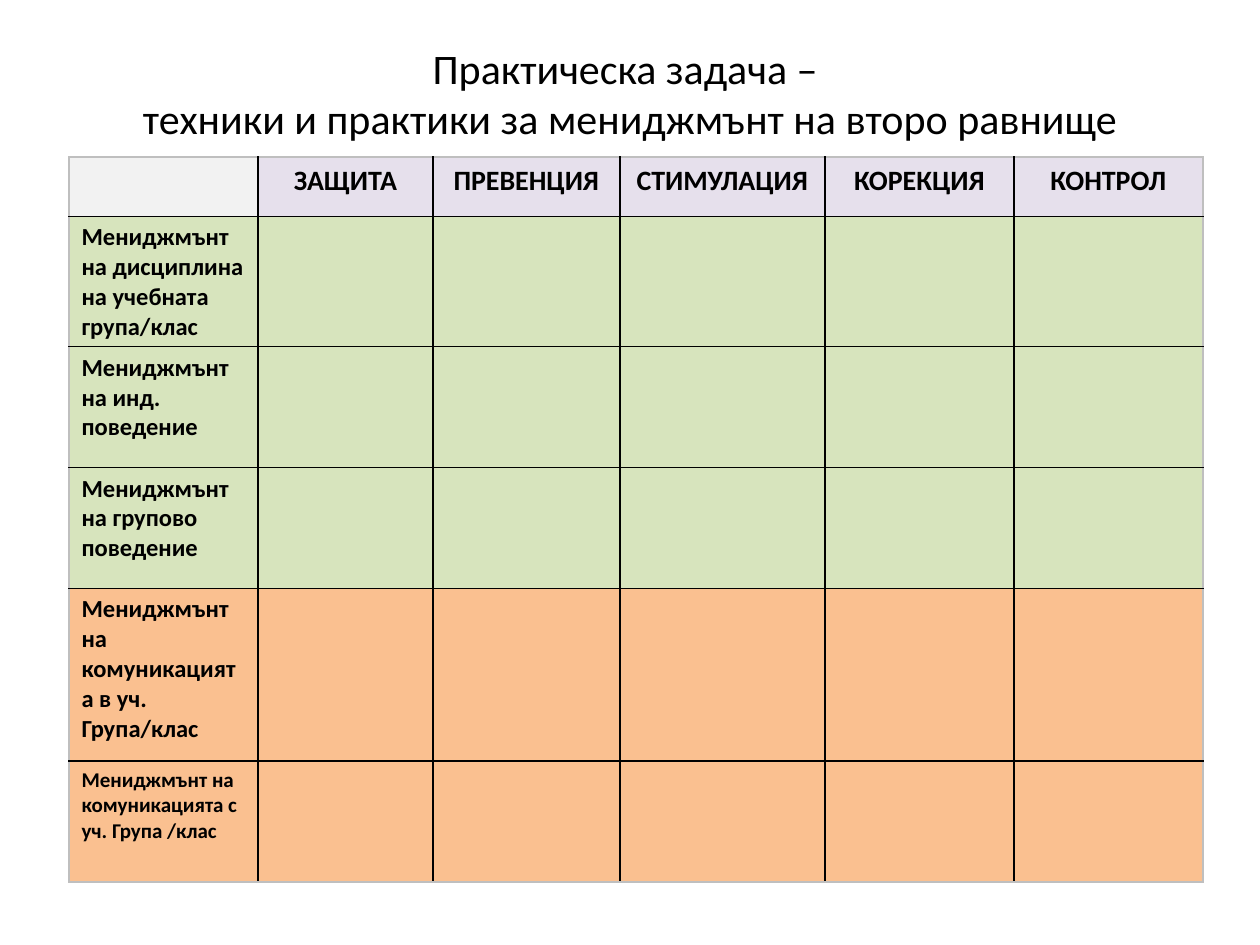
"""Build a slide with a planning table of second-level management techniques."""
from dataclasses import dataclass

from lxml.etree import SubElement
from pptx import Presentation
from pptx.dml.color import RGBColor
from pptx.enum.text import MSO_ANCHOR, PP_ALIGN
from pptx.oxml.ns import qn
from pptx.slide import Slide
from pptx.table import Table, _Cell as Cell
from pptx.text.text import TextFrame
from pptx.util import Pt

FONT = "Calibri"
BLACK = RGBColor(0x00, 0x00, 0x00)
EDGE_GREY = RGBColor(0xBF, 0xBF, 0xBF)
CORNER_GREY = RGBColor(0xF2, 0xF2, 0xF2)
LILAC = RGBColor(0xE6, 0xE0, 0xEC)
GREEN = RGBColor(0xD7, 0xE4, 0xBD)
ORANGE = RGBColor(0xFA, 0xC0, 0x90)


@dataclass(frozen=True)
class Column:
    heading: str
    width: float
    fill: RGBColor = LILAC


@dataclass(frozen=True)
class Row:
    label: str
    fill: RGBColor
    height: float = 69.1
    size: float = 14


TITLE = "Практическа задача – \vтехники и практики за мениджмънт на второ равнище"
HEADER_HEIGHT = 33.8
COLUMNS = [
    Column("", 108, CORNER_GREY),
    Column("ЗАЩИТА", 100),
    Column("ПРЕВЕНЦИЯ", 106.8),
    Column("СТИМУЛАЦИЯ", 117.2),
    Column("КОРЕКЦИЯ", 108),
    Column("КОНТРОЛ", 108),
]
ROWS = [
    Row("Мениджмънт на дисциплина на учебната група/клас", GREEN),
    Row("Мениджмънт на инд. поведение", GREEN),
    Row("Мениджмънт на групово поведение", GREEN),
    Row("Мениджмънт на комуникацията в уч. Група/клас", ORANGE, height=98.6),
    Row("Мениджмънт на комуникацията с уч. Група /клас", ORANGE, size=12),
]


def write_text(text_frame: TextFrame, text: str, size: float, bold: bool, align: PP_ALIGN) -> None:
    text_frame.text = text
    paragraph = text_frame.paragraphs[0]
    paragraph.alignment = align
    for run in paragraph.runs:
        run.font.name = FONT
        run.font.size = Pt(size)
        run.font.bold = bold
        run.font.color.rgb = BLACK


def fill_cell(cell: Cell, color: RGBColor) -> None:
    cell.fill.solid()
    cell.fill.fore_color.rgb = color


def set_borders(cell: Cell, outer_sides: dict[str, bool]) -> None:
    properties = cell._tc.get_or_add_tcPr()
    for index, (side, is_outer) in enumerate(outer_sides.items()):
        line = SubElement(properties, qn(f"a:{side}"), w=str(Pt(1)))
        solid = SubElement(line, qn("a:solidFill"))
        SubElement(solid, qn("a:srgbClr"), val=str(EDGE_GREY if is_outer else BLACK))
        properties.insert(index, line)


def add_title(slide: Slide) -> None:
    text_frame = slide.shapes.add_textbox(Pt(36), Pt(21.6), Pt(648), Pt(62.6)).text_frame
    text_frame.word_wrap = True
    text_frame.vertical_anchor = MSO_ANCHOR.MIDDLE
    write_text(text_frame, TITLE, 24, False, PP_ALIGN.CENTER)


def fill_header(table: Table) -> None:
    table.rows[0].height = Pt(HEADER_HEIGHT)
    for index, column in enumerate(COLUMNS):
        table.columns[index].width = Pt(column.width)
        cell = table.cell(0, index)
        fill_cell(cell, column.fill)
        if column.heading:
            write_text(cell.text_frame, column.heading, 16, True, PP_ALIGN.CENTER)


def fill_rows(table: Table) -> None:
    for index, row in enumerate(ROWS, start=1):
        table.rows[index].height = Pt(row.height)
        for cell in table.rows[index].cells:
            fill_cell(cell, row.fill)
        write_text(table.cell(index, 0).text_frame, row.label, row.size, True, PP_ALIGN.LEFT)


def add_task_table(slide: Slide) -> None:
    row_count, column_count = len(ROWS) + 1, len(COLUMNS)
    width = sum(column.width for column in COLUMNS)
    height = HEADER_HEIGHT + sum(row.height for row in ROWS)
    table = slide.shapes.add_table(
        row_count, column_count, Pt(39.4), Pt(89.8), Pt(width), Pt(height)
    ).table
    table.first_row = table.horz_banding = False
    fill_header(table)
    fill_rows(table)
    for row in range(row_count):
        for column in range(column_count):
            set_borders(table.cell(row, column), {
                "lnL": column == 0,
                "lnR": column == column_count - 1,
                "lnT": row == 0,
                "lnB": row == row_count - 1,
            })


def main() -> None:
    presentation = Presentation()
    presentation.slide_width = Pt(720)
    presentation.slide_height = Pt(540)
    slide = presentation.slides.add_slide(presentation.slide_layouts[6])
    add_title(slide)
    add_task_table(slide)
    presentation.save("out.pptx")


if __name__ == "__main__":
    main()
